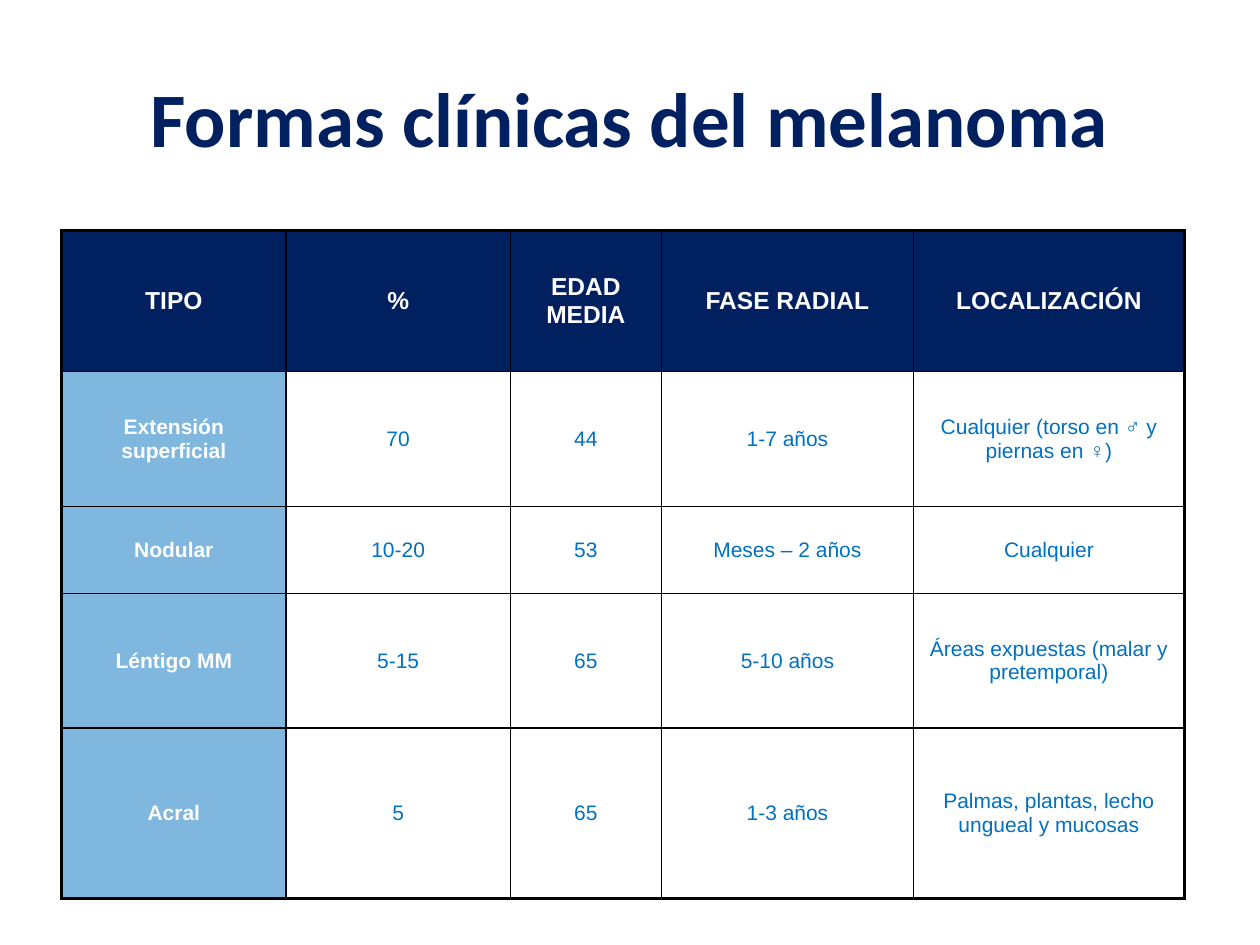
from dataclasses import dataclass

from lxml.etree import SubElement
from pptx import Presentation
from pptx.dml.color import RGBColor
from pptx.enum.text import MSO_ANCHOR, PP_ALIGN
from pptx.oxml.ns import qn
from pptx.util import Inches, Pt

COLORS = {"navy": "002060", "blue": "0070C0", "white": "FFFFFF", "black": "000000"}
OUTER, INNER = 2.25, 1  # border widths in points
COL_WIDTHS = [1.78, 1.78, 1.2, 2, 2.15]
ROW_HEIGHTS = [1.12, 1.07, 0.69, 1.07, 1.35]
HEADERS = ["TIPO", "%", "EDAD MEDIA", "FASE RADIAL", "LOCALIZACIÓN"]


@dataclass
class MelanomaType:
    name: str
    percent: str
    age: str
    radial_phase: str
    location: str

    def texts(self) -> list[str]:
        return [self.name, self.percent, self.age, self.radial_phase, self.location]


@dataclass
class CellStyle:
    size: int
    color: str
    bold: bool
    fill: str | None = None
    alpha: int = 100


HEADER = CellStyle(14, "white", True, "navy")
ROW_LABEL = CellStyle(12, "white", True, "blue", 50)
BODY = CellStyle(12, "blue", False)

TYPES = [
    MelanomaType("Extensión superficial", "70", "44", "1-7 años",
                 "Cualquier (torso en ♂ y piernas en ♀)"),
    MelanomaType("Nodular", "10-20", "53", "Meses – 2 años", "Cualquier"),
    MelanomaType("Léntigo MM", "5-15", "65", "5-10 años",
                 "Áreas expuestas (malar y pretemporal)"),
    MelanomaType("Acral", "5", "65", "1-3 años",
                 "Palmas, plantas, lecho ungueal y mucosas"),
]


def rgb(name: str) -> RGBColor:
    return RGBColor.from_string(COLORS[name])


def format_text(p, font: str, size: int, color: str, bold: bool) -> None:
    p.alignment = PP_ALIGN.CENTER
    p.font.name, p.font.size, p.font.bold = font, Pt(size), bold
    p.font.color.rgb = rgb(color)


def set_borders(cell, widths: dict[str, float]) -> None:
    tc_pr = cell._tc.get_or_add_tcPr()
    for side, width in widths.items():
        ln = SubElement(tc_pr, qn(f"a:ln{side}"), w=str(Pt(width)))
        fill = SubElement(ln, qn("a:solidFill"))
        SubElement(fill, qn("a:srgbClr"), val=COLORS["black"])


def fill_cell(cell, style: CellStyle) -> None:
    if style.fill is None:
        cell.fill.background()
        return
    cell.fill.solid()
    cell.fill.fore_color.rgb = rgb(style.fill)
    if style.alpha < 100:
        clr = cell._tc.tcPr.find(f"{qn('a:solidFill')}/{qn('a:srgbClr')}")
        SubElement(clr, qn("a:alpha"), val=str(style.alpha * 1000))


def draw_cell(cell, text: str, style: CellStyle, borders: dict[str, float]) -> None:
    cell.text = text
    cell.vertical_anchor = MSO_ANCHOR.MIDDLE
    cell.margin_left = cell.margin_right = Inches(0.1)
    cell.margin_top = cell.margin_bottom = Inches(0.1)
    format_text(cell.text_frame.paragraphs[0], "Arial", style.size, style.color, style.bold)
    set_borders(cell, borders)
    fill_cell(cell, style)


def draw_title(s, text: str) -> None:
    title = s.shapes.title
    title.left, title.top = Inches(0.5), Inches(0.3)
    title.width, title.height = Inches(9), Inches(1.25)
    tf = title.text_frame
    tf.text = text
    tf.vertical_anchor = MSO_ANCHOR.MIDDLE
    format_text(tf.paragraphs[0], "Calibri", 44, "navy", True)


def draw_table(s, rows: list[list[str]]) -> None:
    last_row, last_col = len(rows) - 1, len(COL_WIDTHS) - 1
    table = s.shapes.add_table(
        len(rows), len(COL_WIDTHS), Inches(0.49), Inches(1.83),
        Inches(sum(COL_WIDTHS)), Inches(sum(ROW_HEIGHTS))).table
    table.horz_banding = False
    for col, width in zip(table.columns, COL_WIDTHS):
        col.width = Inches(width)
    for row, height in zip(table.rows, ROW_HEIGHTS):
        row.height = Inches(height)

    for i, texts in enumerate(rows):
        for j, text in enumerate(texts):
            style = HEADER if i == 0 else ROW_LABEL if j == 0 else BODY
            borders = {
                "L": OUTER if j == 0 else INNER,
                "R": OUTER if j == last_col else INNER,
                "T": OUTER if i == 0 else INNER,
                "B": OUTER if i == last_row else INNER,
            }
            draw_cell(table.cell(i, j), text, style, borders)


def main() -> None:
    prs = Presentation()
    prs.slide_width, prs.slide_height = Inches(10), Inches(7.5)
    s = prs.slides.add_slide(prs.slide_layouts[5])  # title only

    # Title
    draw_title(s, "Formas clínicas del melanoma")

    # Clinical forms
    draw_table(s, [HEADERS] + [t.texts() for t in TYPES])

    prs.save("out.pptx")


if __name__ == "__main__":
    main()
